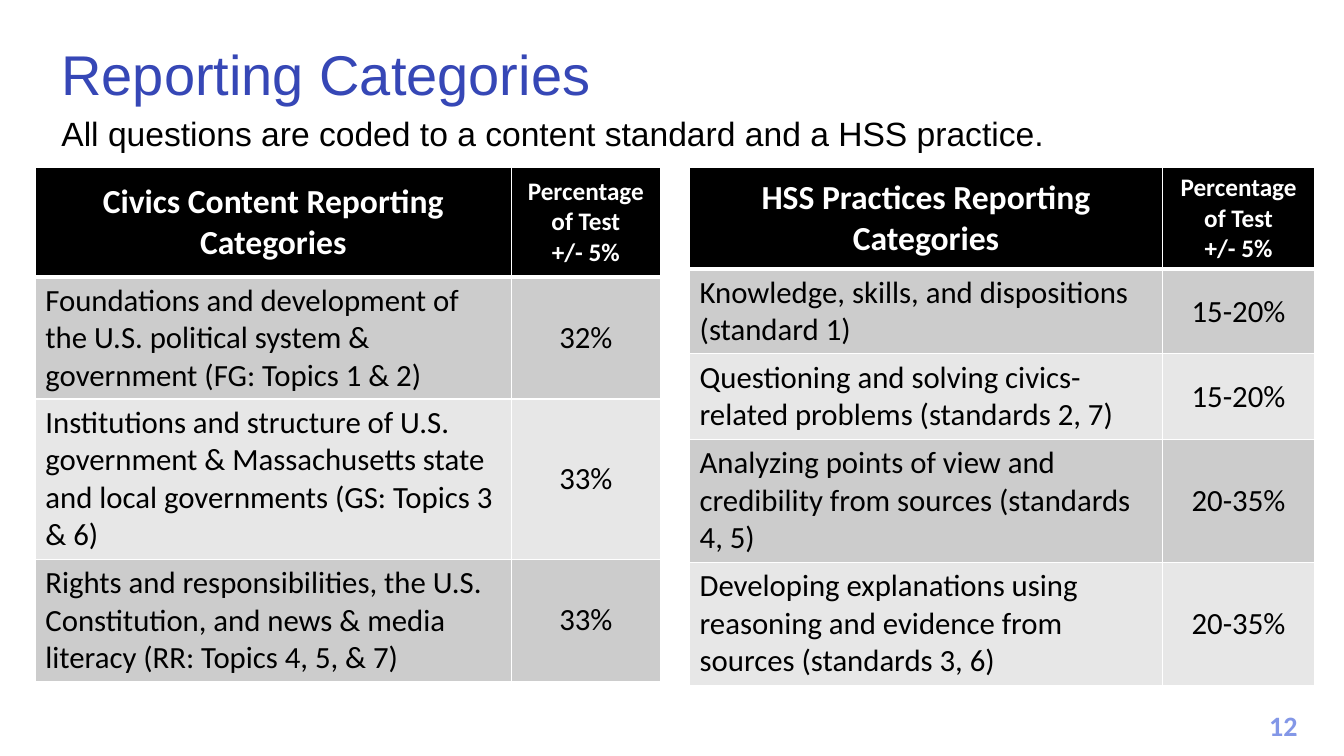
from lxml import etree
from pptx import Presentation
from pptx import util as u
from pptx.dml.color import RGBColor
from pptx.enum import text
from pptx.oxml.ns import qn

W, H = u.Inches(13.33), u.Inches(7.5)
COLORS = {"title": "3647B6", "page": "8397E7", "ink": "000000", "paper": "FFFFFF",
          "header": "000000", "odd": "CCCCCC", "even": "E7E7E7"}
CENTER, LEFT = text.PP_ALIGN.CENTER, text.PP_ALIGN.LEFT
TOP, MIDDLE, BOTTOM = text.MSO_ANCHOR.TOP, text.MSO_ANCHOR.MIDDLE, text.MSO_ANCHOR.BOTTOM
TABLE_TOP = 22.13

CIVICS = [
    ("Civics Content Reporting Categories", "Percentage of Test\n+/- 5%"),
    ("Foundations and development of the U.S. political system & government (FG: Topics 1 & 2)", "32%"),
    ("Institutions and structure of U.S. government & Massachusetts state and local governments "
     "(GS: Topics 3 & 6)", "33%"),
    ("Rights and responsibilities, the U.S. Constitution, and news & media literacy "
     "(RR: Topics 4, 5, & 7)", "33%"),
]
PRACTICES = [
    ("HSS Practices Reporting Categories", "Percentage of Test\n+/- 5%"),
    ("Knowledge, skills, and dispositions (standard 1)", "15-20%"),
    ("Questioning and solving civics-related problems (standards 2, 7)", "15-20%"),
    ("Analyzing points of view and credibility from sources (standards 4, 5)", "20-35%"),
    ("Developing explanations using reasoning and evidence from sources (standards 3, 6)", "20-35%"),
]


def across(percent):
    return int(W * percent / 100)


def down(percent):
    return int(H * percent / 100)


def rgb(name):
    return RGBColor.from_string(COLORS[name])


def write(tf, content, font, size, color, bold=False, align=LEFT, spacing=None):
    tf.text = content
    for p in tf.paragraphs:
        p.alignment = align
        p.line_spacing = spacing
        p.font.name = font
        p.font.size = u.Pt(size)
        p.font.bold = bold
        p.font.color.rgb = rgb(color)


def add_text(s, box, content, anchor=TOP, **style):
    x, y, w, h = box
    tf = s.shapes.add_textbox(across(x), down(y), across(w), down(h)).text_frame
    tf.word_wrap = True
    tf.vertical_anchor = anchor
    write(tf, content, **style)


def add_borders(cell, top, bottom):
    tcPr = cell._tc.get_or_add_tcPr()
    widths = {"lnL": 1, "lnR": 1, "lnT": top, "lnB": bottom}
    for i, (side, width) in enumerate(widths.items()):
        ln = etree.Element(qn("a:" + side), w=str(u.Pt(width)))
        fill = etree.SubElement(ln, qn("a:solidFill"))
        etree.SubElement(fill, qn("a:srgbClr"), val=COLORS["paper"])
        tcPr.insert(i, ln)


def style_cell(cell, content, row, col):
    header = row == 0
    cell.fill.solid()
    cell.fill.fore_color.rgb = rgb("header" if header else "odd" if row % 2 else "even")
    cell.vertical_anchor = MIDDLE if header or col else TOP
    size = (18 if col else 24) if header else 22
    write(cell.text_frame, content, "Calibri", size, "paper" if header else "ink",
          bold=header, align=CENTER if header or col else LEFT)
    add_borders(cell, top=3 if row == 1 else 1, bottom=3 if header else 1)


def add_categories(s, left, widths, heights, rows):
    frame = s.shapes.add_table(len(rows), 2, across(left), down(TABLE_TOP),
                               across(sum(widths)), down(sum(heights)))
    table = frame.table
    for column, width in zip(table.columns, widths):
        column.width = across(width)
    for i, (height, contents) in enumerate(zip(heights, rows)):
        table.rows[i].height = down(height)
        for j, content in enumerate(contents):
            style_cell(table.cell(i, j), content, i, j)


def main():
    prs = Presentation()
    prs.slide_width, prs.slide_height = W, H
    s = prs.slides.add_slide(prs.slide_layouts[6])
    add_text(s, (93.17, 93.07, 4.65, 5.87), "12", font="Calibri", size=20,
             color="page", bold=True, align=CENTER)
    add_text(s, (3.83, 3.2, 90.17, 11.73), "Reporting Categories", anchor=BOTTOM,
             font="Arial", size=40, color="title", spacing=0.9)
    add_text(s, (3.83, 14.93, 92.35, 73.47),
             "All questions are coded to a content standard and a HSS practice.",
             font="Arial", size=24, color="ink", spacing=0.9)
    add_categories(s, 2.63, (35.41, 11.1), (14.53, 16.13, 21.2, 16.13), CIVICS)
    add_categories(s, 51.31, (35.18, 11.33), (13.47, 11.2, 11.33, 16.27, 16.27), PRACTICES)
    prs.save("out.pptx")


if __name__ == "__main__":
    main()
